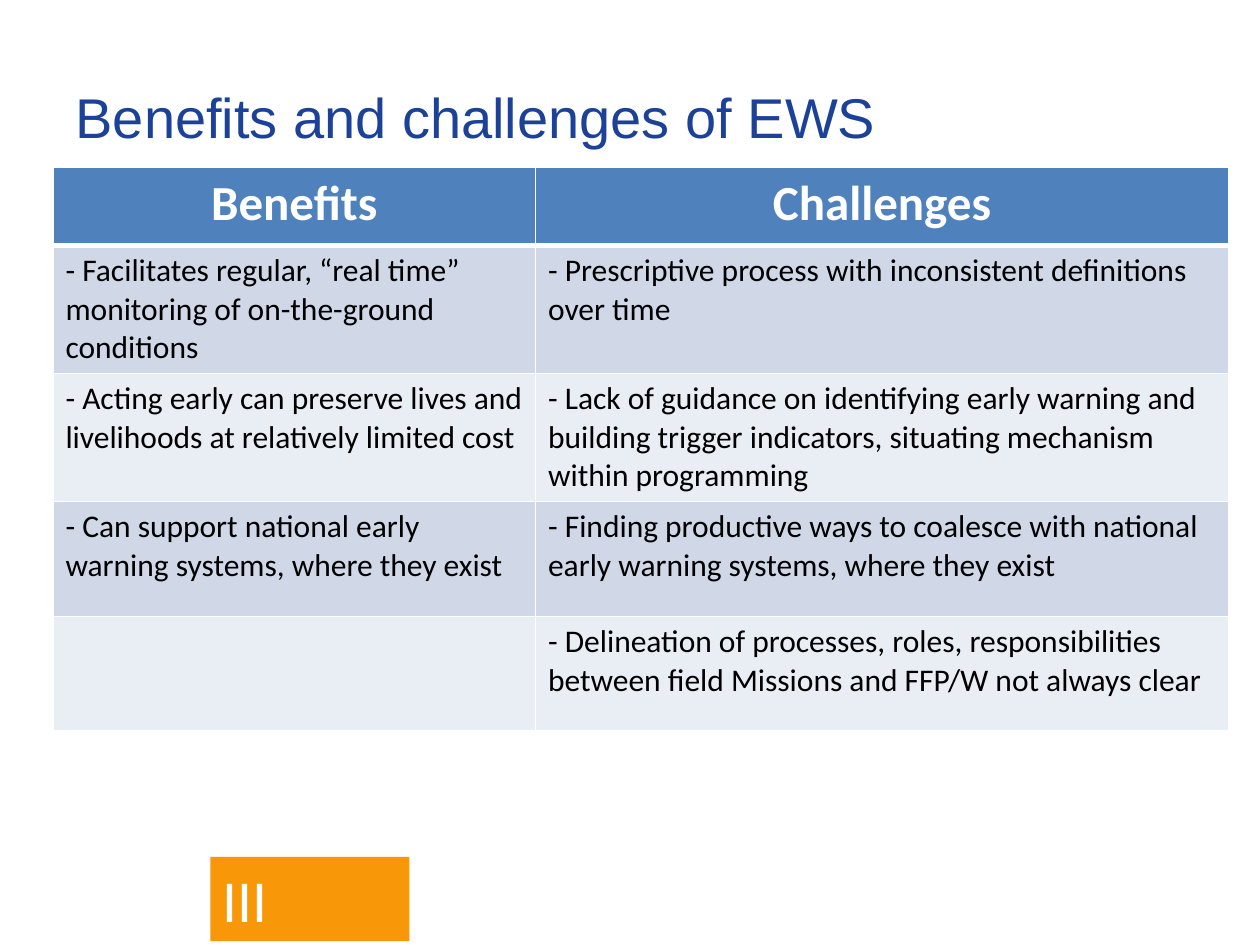
from lxml import etree
from pptx import Presentation
from pptx.dml.color import RGBColor
from pptx.enum.shapes import MSO_SHAPE
from pptx.enum.text import MSO_ANCHOR, PP_ALIGN
from pptx.oxml.ns import qn
from pptx.util import Inches, Pt

RECTANGLE = MSO_SHAPE.RECTANGLE
TOP, MIDDLE = MSO_ANCHOR.TOP, MSO_ANCHOR.MIDDLE
LEFT, CENTER = PP_ALIGN.LEFT, PP_ALIGN.CENTER

WHITE = RGBColor(0xFF, 0xFF, 0xFF)
BLACK = RGBColor(0x00, 0x00, 0x00)
NAVY = RGBColor(0x1B, 0x42, 0x98)
ORANGE = RGBColor(0xF8, 0x97, 0x08)
HEADER_BLUE = RGBColor(0x4F, 0x81, 0xBD)
BAND_DARK = RGBColor(0xD0, 0xD8, 0xE8)
BAND_LIGHT = RGBColor(0xE9, 0xED, 0xF4)

HEADINGS = ("Benefits", "Challenges")
POINTS = [
    ("- Facilitates regular, “real time” monitoring of on-the-ground conditions",
     "- Prescriptive process with inconsistent definitions over time"),
    ("- Acting early can preserve lives and livelihoods at relatively limited cost",
     "- Lack of guidance on identifying early warning and building trigger "
     "indicators, situating mechanism within programming"),
    ("- Can support national early warning systems, where they exist",
     "- Finding productive ways to coalesce with national early warning "
     "systems, where they exist"),
    ("",
     "- Delineation of processes, roles, responsibilities between field "
     "Missions and FFP/W not always clear"),
]


class SlideBuilder:
    """Holds the text style and the current slide."""

    title_font = "Arial"
    body_font = "Calibri"

    def __init__(self, slide):
        self.slide = slide

    def add_text(self, frame, text, size, color, font, bold=False, align=LEFT):
        paragraph = frame.paragraphs[0]
        paragraph.alignment = align
        paragraph.font.size = Pt(size)
        if text:
            run = paragraph.add_run()
            run.text = text
            run.font.name = font
            run.font.size = Pt(size)
            run.font.bold = bold
            run.font.color.rgb = color

    def title(self, text, left, top, width, height):
        heading = self.slide.shapes.title
        heading.left, heading.top = Inches(left), Inches(top)
        heading.width, heading.height = Inches(width), Inches(height)
        heading.text_frame.vertical_anchor = MIDDLE
        self.add_text(heading.text_frame, text, 32, NAVY, self.title_font)

    def label_box(self, text, left, top, width, height):
        box = self.slide.shapes.add_shape(
            RECTANGLE, Inches(left), Inches(top), Inches(width), Inches(height))
        box.shadow.inherit = False
        box.fill.solid()
        box.fill.fore_color.rgb = ORANGE
        box.line.fill.background()
        box.text_frame.vertical_anchor = TOP
        self.add_text(box.text_frame, text, 34, WHITE, self.body_font)

    def borders(self, cell, top, bottom):
        properties = cell._tc.get_or_add_tcPr()
        for side, points in (("L", 1), ("R", 1), ("T", top), ("B", bottom)):
            line = etree.SubElement(properties, qn("a:ln" + side), w=str(Pt(points)))
            fill = etree.SubElement(line, qn("a:solidFill"))
            etree.SubElement(fill, qn("a:srgbClr"), val=str(WHITE))

    def table(self, headings, rows, left, top, col_widths, row_heights):
        table = self.slide.shapes.add_table(
            len(row_heights), len(col_widths), Inches(left), Inches(top),
            Inches(sum(col_widths)), Inches(sum(row_heights))).table
        for column, width in zip(table.columns, col_widths):
            column.width = Inches(width)
        for row, height in zip(table.rows, row_heights):
            row.height = Inches(height)

        for r, texts in enumerate([headings, *rows]):
            for c, text in enumerate(texts):
                cell = table.cell(r, c)
                # A thick rule parts the header from the body
                self.borders(cell, top=3 if r == 1 else 1, bottom=3 if r == 0 else 1)
                cell.fill.solid()
                if r == 0:
                    cell.fill.fore_color.rgb = HEADER_BLUE
                    self.add_text(cell.text_frame, text, 28, WHITE, self.body_font,
                                  bold=True, align=CENTER)
                else:
                    cell.fill.fore_color.rgb = BAND_DARK if r % 2 else BAND_LIGHT
                    self.add_text(cell.text_frame, text, 18, BLACK, self.body_font)


def main():
    deck = Presentation()
    deck.slide_width, deck.slide_height = Inches(10), Inches(7.5)
    title_only = deck.slide_layouts[5]
    builder = SlideBuilder(deck.slides.add_slide(title_only))

    # Section marker at the foot
    builder.label_box("III", 1.67, 6.8, 1.58, 0.67)

    # Title and comparison table
    builder.title("Benefits and challenges of EWS", 0.5, 0.3, 9, 1.25)
    builder.table(HEADINGS, POINTS, 0.42, 1.33,
                  col_widths=(3.83, 5.5),
                  row_heights=[0.62] + [0.91] * len(POINTS))

    deck.save("out.pptx")


if __name__ == "__main__":
    main()
